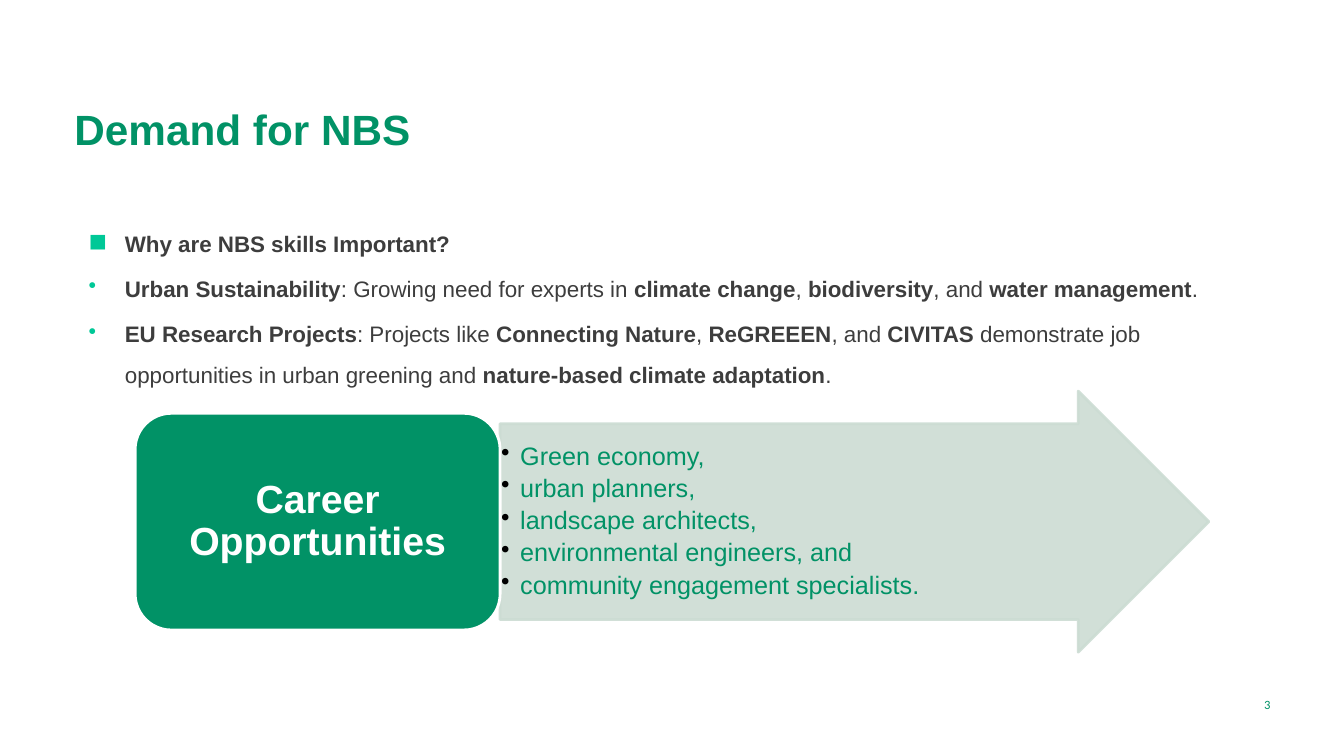
import pptx
import pptx.dml.color
import pptx.enum.shapes
import pptx.enum.text
import pptx.oxml
import pptx.oxml.ns
import pptx.util

Inches = pptx.util.Inches
Pt = pptx.util.Pt
RGBColor = pptx.dml.color.RGBColor
ALIGN = pptx.enum.text.PP_ALIGN
ANCHOR = pptx.enum.text.MSO_ANCHOR
SHAPE = pptx.enum.shapes.MSO_SHAPE
qn = pptx.oxml.ns.qn

GREEN = RGBColor(0x01, 0x92, 0x66)
MINT = RGBColor(0x00, 0xC8, 0x97)
PALE = RGBColor(0xCC, 0xDC, 0xD3)
DARK = RGBColor(0x3D, 0x3D, 0x3D)
WHITE = RGBColor(0xFF, 0xFF, 0xFF)
BLACK = RGBColor(0, 0, 0)

REASONS = [
    ("◼", [("Why are NBS skills Important?", True)]),
    ("•", [("Urban Sustainability", True), (": Growing need for experts in ", False),
           ("climate change", True), (", ", False), ("biodiversity", True),
           (", and ", False), ("water management", True), (".", False)]),
    ("•", [("EU Research Projects", True), (": Projects like ", False),
           ("Connecting Nature", True), (", ", False), ("ReGREEEN", True),
           (", and ", False), ("CIVITAS", True),
           (" demonstrate job opportunities in urban greening and ", False),
           ("nature-based climate adaptation", True), (".", False)]),
]
CAREERS = ["Green economy,", "urban planners,", "landscape architects,",
           "environmental engineers, and", "community engagement specialists."]


def set_frame(sp, anchor, inset_x=0.1, inset_y=0.05):
    tf = sp.text_frame
    tf.word_wrap = True
    tf.vertical_anchor = anchor
    tf.margin_left = tf.margin_right = Inches(inset_x)
    tf.margin_top = tf.margin_bottom = Inches(inset_y)
    return tf


def add_text_box(s, box, anchor):
    return set_frame(s.shapes.add_textbox(*map(Inches, box)), anchor)


def add_run(p, text, size, color, bold=False, font="Arial"):
    r = p.add_run()
    r.text = text
    r.font.name = font
    r.font.size = Pt(size)
    r.font.bold = bold
    r.font.color.rgb = color


def add_paragraph(tf, index):
    return tf.add_paragraph() if index else tf.paragraphs[0]


def set_bullet(p, char, color, left, hanging):
    pPr = p._p.get_or_add_pPr()
    pPr.set("marL", str(Inches(left)))
    pPr.set("indent", str(-Inches(hanging)))
    buClr = pptx.oxml.parse_xml(
        f'<a:buClr {pptx.oxml.ns.nsdecls("a")}><a:srgbClr val="{color}"/></a:buClr>')
    buChar = pptx.oxml.parse_xml(f'<a:buChar {pptx.oxml.ns.nsdecls("a")} char="{char}"/>')
    pPr.extend([buClr, buChar])


def add_block(s, kind, box, fill, line):
    sp = s.shapes.add_shape(kind, *map(Inches, box))
    sp.shadow.inherit = False
    sp.fill.solid()
    sp.fill.fore_color.rgb = fill
    sp.line.color.rgb = line
    sp.line.width = Pt(2)
    return sp


def set_opacity(sp, percent):
    for clr in sp._element.spPr.iter(qn("a:srgbClr")):
        alpha = clr.makeelement(qn("a:alpha"), {"val": str(percent * 1000)})
        clr.append(alpha)


def add_title(s, box):
    tf = add_text_box(s, box, ANCHOR.BOTTOM)
    add_run(tf.paragraphs[0], "Demand for NBS", 30.2, GREEN, True)


def add_page_number(s, box):
    p = add_text_box(s, box, ANCHOR.MIDDLE).paragraphs[0]
    p.alignment = ALIGN.RIGHT
    add_run(p, "3", 9, GREEN, font="Calibri")


def add_reasons(s, box):
    tf = add_text_box(s, box, ANCHOR.MIDDLE)
    for i, (char, runs) in enumerate(REASONS):
        p = add_paragraph(tf, i)
        set_bullet(p, char, MINT, 0.5, 0.36)
        p.line_spacing = 1.5
        if i:
            p.space_before = Pt(3.6)
        for text, bold in runs:
            add_run(p, text, 16, DARK, bold)


def add_careers(s, box):
    left, top, width, height = box
    label_w, label_h = 3.62, 2.15
    arrow = add_block(s, SHAPE.RIGHT_ARROW,
                      (left + label_w, top, width - label_w, height), PALE, PALE)
    arrow.adjustments[0] = 0.75
    arrow.adjustments[1] = 0.5
    set_opacity(arrow, 90)
    tf = set_frame(arrow, ANCHOR.MIDDLE, 0.01, 0.01)
    for i, career in enumerate(CAREERS):
        p = add_paragraph(tf, i)
        set_bullet(p, "•", BLACK, 0.19, 0.19)
        p.alignment = ALIGN.LEFT
        p.line_spacing = 0.9
        p.space_after = Pt(3.5)
        add_run(p, career, 18, GREEN)

    label = add_block(s, SHAPE.ROUNDED_RECTANGLE,
                      (left, top + (height - label_h) / 2, label_w, label_h), GREEN, WHITE)
    p = set_frame(label, ANCHOR.MIDDLE, 0.12, 0.06).paragraphs[0]
    p.alignment = ALIGN.CENTER
    p.line_spacing = 0.9
    add_run(p, "Career Opportunities", 28, WHITE, True)


def main():
    prs = pptx.Presentation()
    prs.slide_width = Inches(13.33)
    prs.slide_height = Inches(7.5)
    s = prs.slides.add_slide(prs.slide_layouts[6])
    add_page_number(s, (11.55, 6.79, 1.15, 0.4))
    add_title(s, (0.64, 1.06, 7.27, 0.52))
    add_reasons(s, (0.64, 1.04, 11.4, 3.91))
    add_careers(s, (1.34, 3.88, 10.65, 2.59))
    prs.save("out.pptx")


if __name__ == "__main__":
    main()
